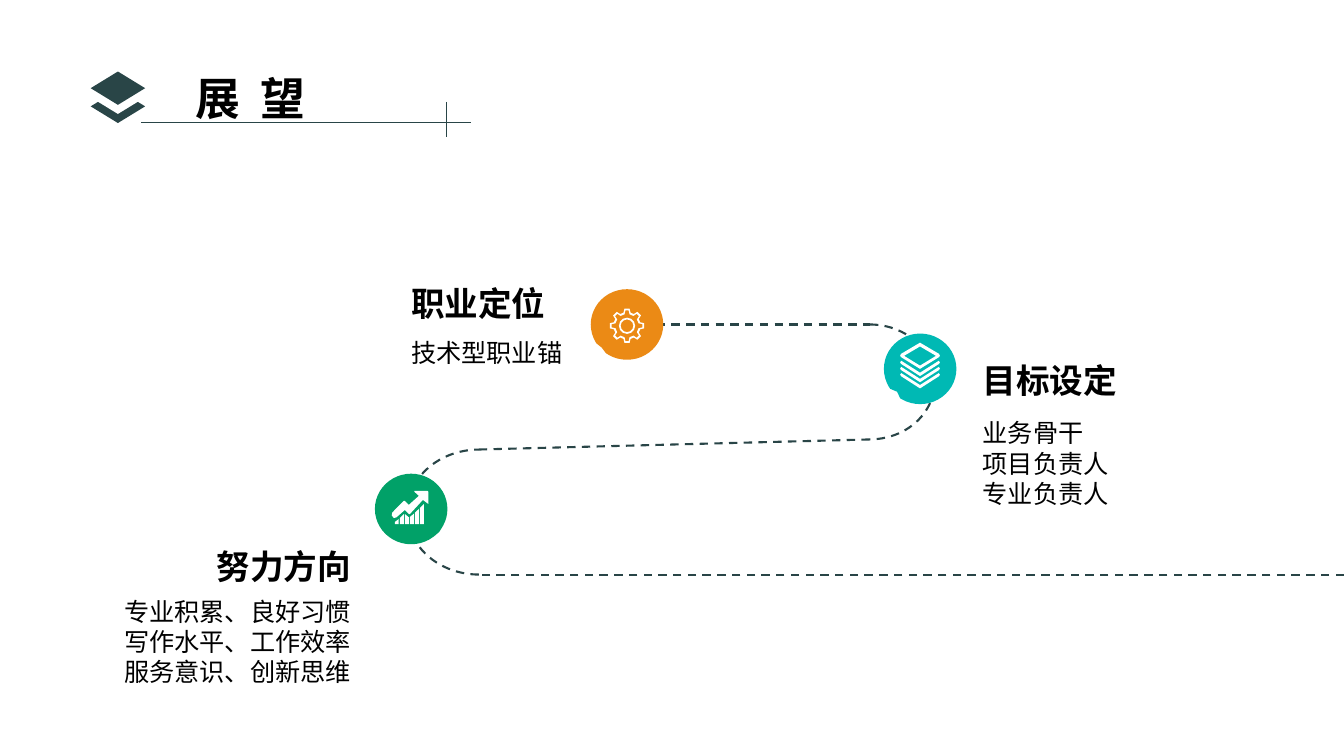
from math import cos, radians, sin

from lxml.etree import SubElement
from pptx import Presentation
from pptx.dml.color import RGBColor
from pptx.enum.dml import MSO_LINE
from pptx.enum.shapes import MSO_CONNECTOR, MSO_SHAPE
from pptx.enum.text import PP_ALIGN
from pptx.oxml.ns import qn
from pptx.util import Pt

SLATE = RGBColor(0x29, 0x45, 0x47)
ORANGE = RGBColor(0xEB, 0x8A, 0x15)
TEAL = RGBColor(0x00, 0xB9, 0xB4)
GREEN = RGBColor(0x01, 0xA1, 0x68)
WHITE = RGBColor(0xFF, 0xFF, 0xFF)
BLACK = RGBColor(0x00, 0x00, 0x00)
FONT = "Noto Sans CJK SC"
MARKER_WIDTH, MARKER_HEIGHT = 51.8, 50.4


def paint(shape, color):
    shape.shadow.inherit = False
    shape.fill.solid()
    shape.fill.fore_color.rgb = color
    shape.line.fill.background()
    return shape


def add_preset(slide, preset, left, top, width, height, color):
    shape = slide.shapes.add_shape(preset, Pt(left), Pt(top), Pt(width), Pt(height))
    return paint(shape, color)


def add_outline(slide, left, top, contours):
    """Fill closed contours in white; their points are relative to left, top."""
    scaled = [[(x * 100, y * 100) for x, y in contour] for contour in contours]
    builder = slide.shapes.build_freeform(*scaled[0][0], scale=Pt(0.01))
    builder.add_line_segments(scaled[0][1:], close=True)
    for contour in scaled[1:]:
        builder.move_to(*contour[0])
        builder.add_line_segments(contour[1:], close=True)
    paint(builder.convert_to_shape(Pt(left), Pt(top)), WHITE)


def style_line(line, width, dashed):
    line.color.rgb = SLATE
    line.width = Pt(width)
    if dashed:
        line.dash_style = MSO_LINE.DASH


def add_line(slide, start, end, width, dashed=False):
    connector = slide.shapes.add_connector(
        MSO_CONNECTOR.STRAIGHT, *(Pt(value) for value in (*start, *end)))
    style_line(connector.line, width, dashed)
    SubElement(connector.element.spPr, qn("a:effectLst"))


def add_text(slide, left, top, width, lines, size, bold=False,
             align=PP_ALIGN.LEFT, indent=0):
    line_height = size * 1.2
    box = slide.shapes.add_textbox(
        Pt(left), Pt(top), Pt(width), Pt(line_height * len(lines) + 7.2))
    frame = box.text_frame
    frame.word_wrap = True
    frame.margin_left = Pt(7.2 + indent)
    frame.margin_top = Pt(3.6 + size * 0.1)
    frame.text = "\n".join(lines)
    for paragraph in frame.paragraphs:
        paragraph.alignment = align
        paragraph.line_spacing = Pt(line_height)
        for run in paragraph.runs:
            run.font.size = Pt(size)
            run.font.bold = bold
            run.font.name = FONT
            run.font.color.rgb = BLACK
            SubElement(run.font._element, qn("a:ea")).set("typeface", FONT)
    return box


def add_title(slide, left, top):
    for level, color in ((2, SLATE), (1, WHITE), (0, SLATE)):
        add_preset(slide, MSO_SHAPE.DIAMOND, left, top + 6.5 * level, 38.9, 23.8, color)
    add_line(slide, (left + 36, top + 36), (left + 271.4, top + 36), 0.5)
    add_line(slide, (left + 254.2, top + 21.6), (left + 254.2, top + 46.8), 0.5)
    title = add_text(slide, left + 38.9, top - 7.2, 209.5, ["展 望"], 32, True, indent=28.7)
    # Letter spacing widens the gap between the two characters
    title.text_frame.paragraphs[0].runs[0].font._element.set("spc", "360")


def add_bend(slide, left, top, width, height, rotation=0):
    bend = slide.shapes.add_shape(
        MSO_SHAPE.RIGHT_BRACKET, Pt(left), Pt(top), Pt(width), Pt(height))
    bend.adjustments[0] = 0.885
    bend.rotation = rotation
    bend.shadow.inherit = False
    bend.fill.background()
    style_line(bend.line, 1.5, True)


def add_road(slide, left, right, top):
    """Dashed road with a right-hand bend, then a left-hand bend."""
    bend_right, bend_left = left + 162.8, left - 116.6
    add_bend(slide, bend_right, top, 46.1, 82.1)
    add_line(slide, (left, top), (bend_right, top), 1.5, True)
    add_line(slide, (bend_left, top + 89.3), (bend_right, top + 82.1), 1.5, True)
    add_bend(slide, bend_left - 51.1, top + 89.3, 51.1, 89.3, 180)
    add_line(slide, (right, top + 178.6), (bend_left, top + 178.6), 1.5, True)


def add_marker(slide, left, top, color, tail_x, tail_y):
    marker = add_preset(slide, MSO_SHAPE.OVAL_CALLOUT, left, top,
                        MARKER_WIDTH, MARKER_HEIGHT, color)
    marker.adjustments[0], marker.adjustments[1] = tail_x, tail_y


def gear_contour(center_x, center_y, tip, tip_angle, base, base_angle):
    corners = ((base, -base_angle), (tip, -tip_angle), (tip, tip_angle), (base, base_angle))
    return [(center_x + radius * cos(radians(tooth + offset)),
             center_y + radius * sin(radians(tooth + offset)))
            for tooth in range(0, 360, 45) for radius, offset in corners]


def add_gear_icon(slide, left, top):
    center_x, center_y = MARKER_WIDTH / 2, MARKER_HEIGHT / 2 + 0.9
    add_outline(slide, left, top, [
        gear_contour(center_x, center_y, 12.4, 8.5, 9.7, 15),
        gear_contour(center_x, center_y, 11, 6, 8.4, 12)])
    hub = add_preset(slide, MSO_SHAPE.DONUT, left + center_x - 5.8,
                     top + center_y - 5.8, 11.6, 11.6, WHITE)
    hub.adjustments[0] = 0.11


def add_layers_icon(slide, left, top):
    left, top = left + 11.6, top + 6.5
    add_outline(slide, left, top, [
        [(14.2, 0), (27.8, 8), (28.4, 9.3), (27.8, 10.3),
         (14.2, 18.7), (0.6, 10.3), (0, 9.3), (0.6, 8)],
        [(14.2, 2.7), (2.8, 9.4), (14.2, 16.4), (25.6, 9.4)]])
    chevron = [(0.8, 0), (14.2, 8.5), (27.6, 0), (28.4, 1.1),
               (27.8, 2.2), (14.2, 10.9), (0.6, 2.2), (0, 1.1)]
    for layer in range(3):
        add_outline(slide, left, top + 12.9 + 4.4 * layer, [chevron])


def add_growth_icon(slide, left, top):
    bar_tops = ((22.3, 20.2), (19.4, 16.6), (16.6, 18.9),
                (18.7, 16.4), (15.6, 13), (12.2, 9.4))
    bars = []
    for index, (top_left, top_right) in enumerate(bar_tops):
        bar_left = 2.2 + 3.6 * index
        bar_right = bar_left + 2.8
        bars.append([(bar_left, 23.8), (bar_left, top_left),
                     (bar_right, top_right), (bar_right, 23.8)])
    arrow = [(16.2, 0), (25.4, 0), (26.1, 0.7), (26.1, 9.4), (22.3, 6.5),
             (13, 16.6), (12.2, 16.6), (9.4, 13.7), (3.2, 19.1), (1.4, 19.4),
             (0, 17.6), (0.4, 15.5), (8.6, 7.2), (9.4, 7.2), (12.2, 10.1),
             (19.4, 3.6), (16.2, 0.7)]
    add_outline(slide, left + 12, top + 12.2, bars + [arrow])


def add_milestone(slide, left, top, width, heading, details, detail_offset,
                  align=PP_ALIGN.LEFT):
    add_text(slide, left, top, width, [heading], 24, True, align)
    add_text(slide, left, top + detail_offset, width, details, 18, align=align)


def build_outlook_slide(deck):
    slide = deck.slides.add_slide(deck.slide_layouts[6])
    add_title(slide, 64.8, 51.1)
    add_road(slide, 458.6, 960, 231.8)

    add_marker(slide, 422, 206.6, ORANGE, -0.349, 0.328)
    add_gear_icon(slide, 422, 206.6)
    add_milestone(slide, 286.6, 195.8, 131, "职业定位", ["技术型职业锚"], 39.6)

    add_marker(slide, 631.4, 238.3, TEAL, -0.318, 0.324)
    add_layers_icon(slide, 631.4, 238.3)
    add_milestone(slide, 694.8, 251.3, 242, "目标设定",
                  ["业务骨干", "项目负责人", "专业负责人"], 41.7)

    add_marker(slide, 267.8, 338.4, GREEN, 0.388, 0.324)
    add_growth_icon(slide, 267.8, 338.4)
    add_milestone(slide, 15.1, 383.8, 242.6, "努力方向",
                  ["专业积累、良好习惯", "写作水平、工作效率", "服务意识、创新思维"],
                  36.7, PP_ALIGN.RIGHT)


def main():
    deck = Presentation()
    deck.slide_width, deck.slide_height = Pt(960), Pt(540)
    build_outlook_slide(deck)
    deck.save("out.pptx")


if __name__ == "__main__":
    main()
